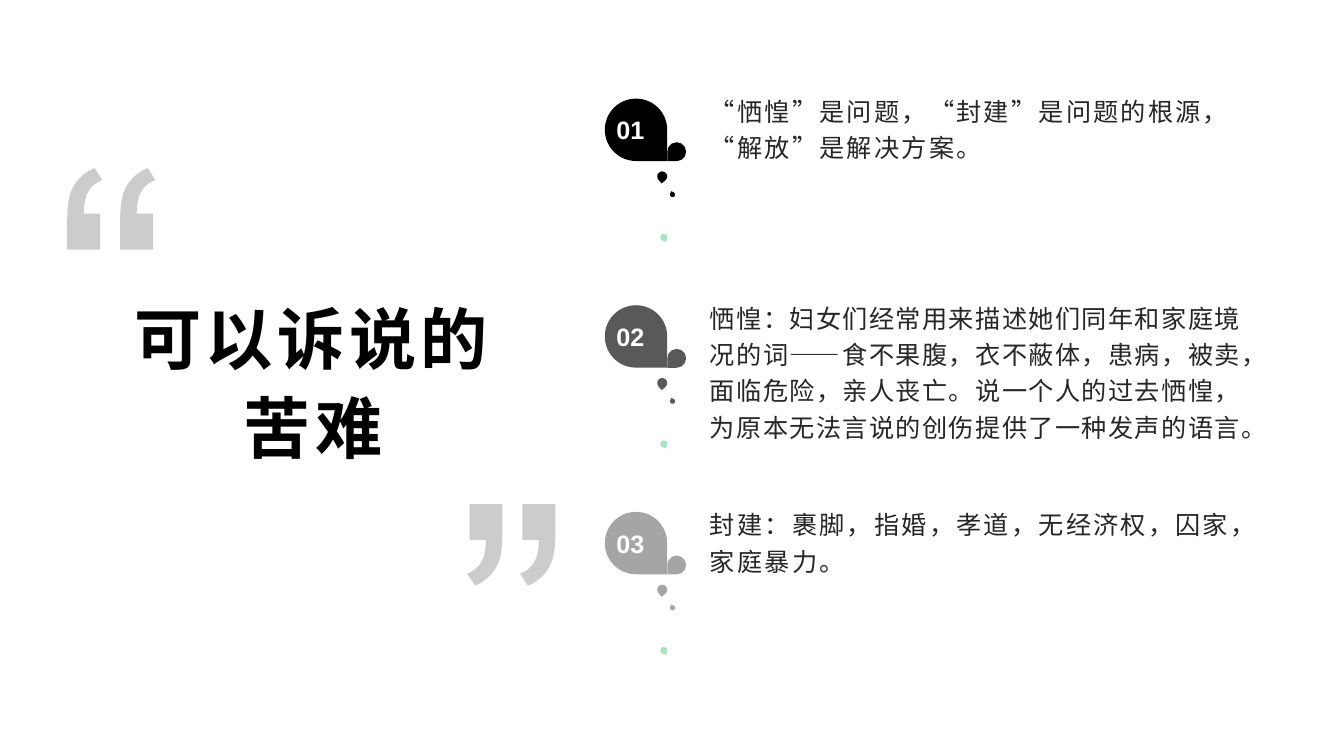
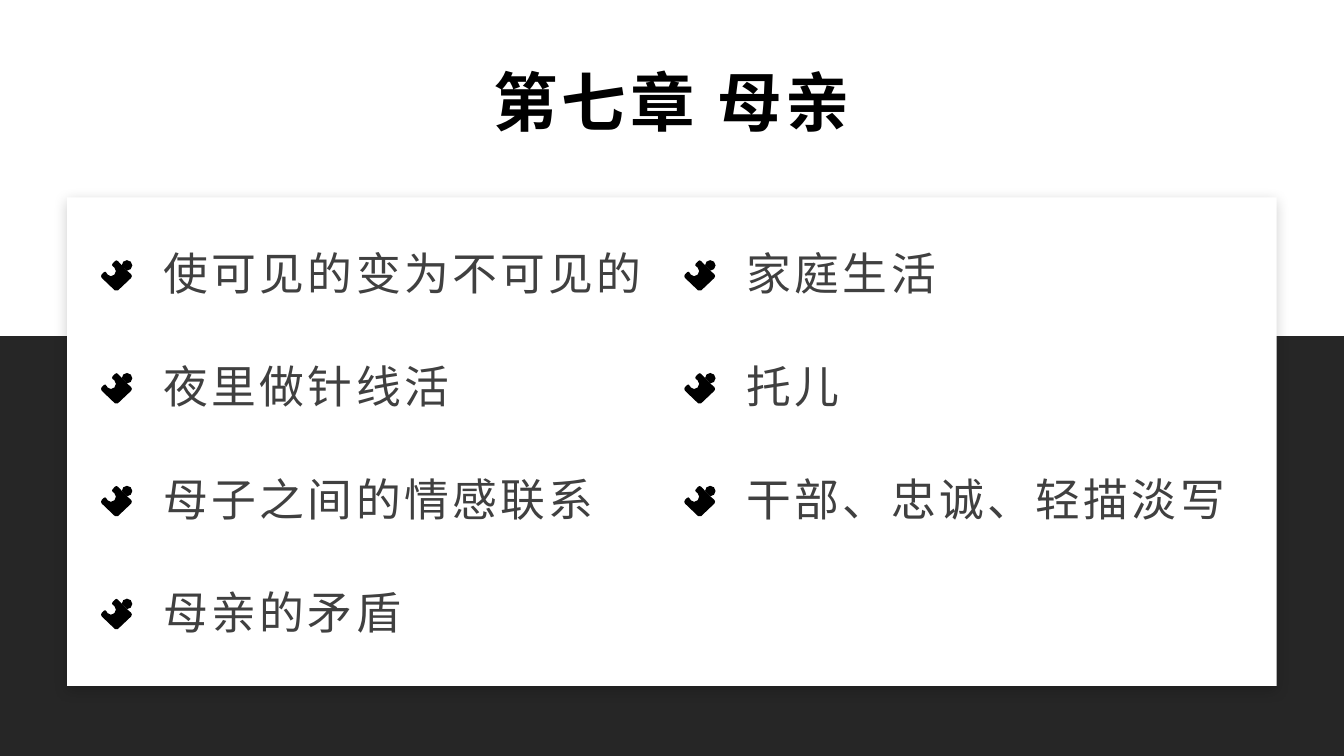
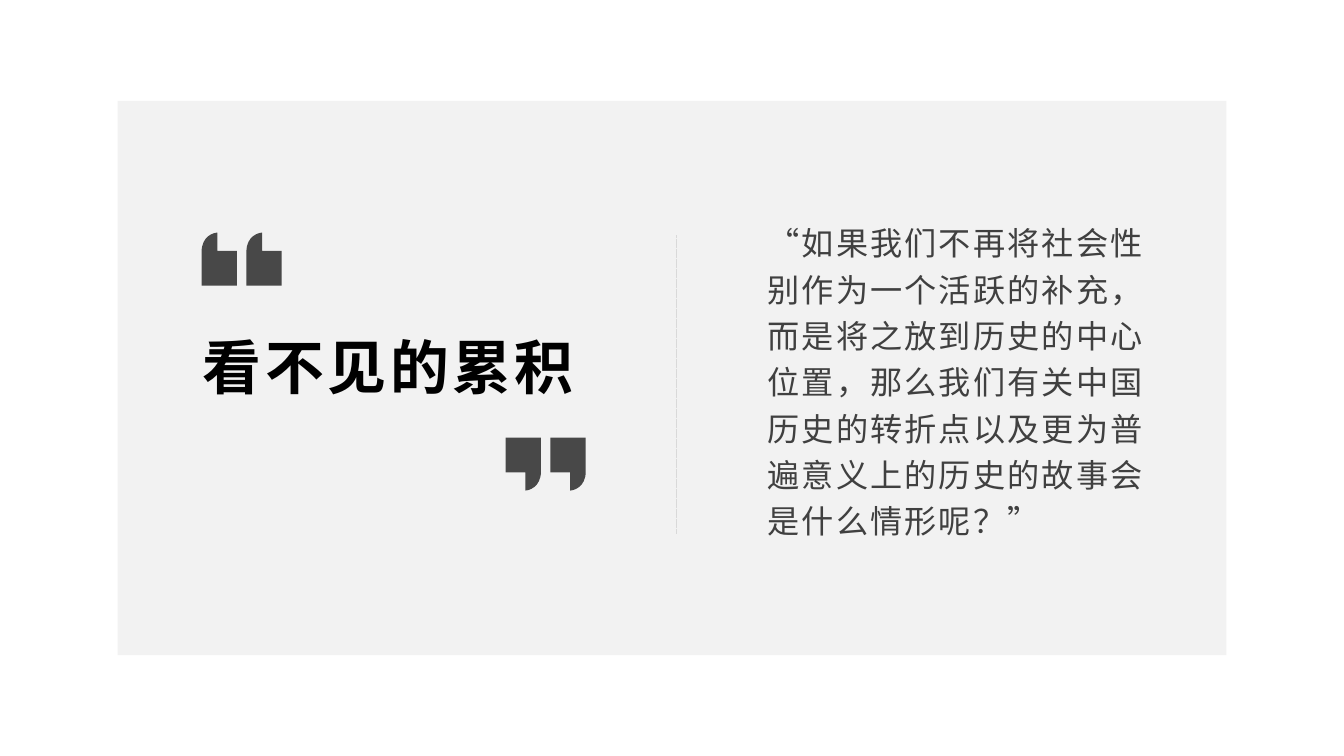
import dataclasses
import itertools
from typing import Any, Optional

import lxml.etree
import pptx
import pptx.dml.color
import pptx.enum.dml
import pptx.enum.shapes
import pptx.enum.text
import pptx.oxml.ns
import pptx.util

Pt = pptx.util.Pt
qn = pptx.oxml.ns.qn
SHAPE = pptx.enum.shapes.MSO_SHAPE
ALIGN = pptx.enum.text.PP_ALIGN
ANCHOR = pptx.enum.text.MSO_ANCHOR

COLORS = {
    "black": "000000",
    "white": "FFFFFF",
    "charcoal": "262626",
    "slate": "404040",
    "gray": "595959",
    "silver": "A5A5A5",
    "rule": "D9D9D9",
    "panel": "F2F2F2",
    "green": "54C888",
}
LATIN = "Arial"
CJK = "Noto Sans CJK SC"
TIGHT = (5, 2.5)

Contour = list[tuple[float, ...]]


@dataclasses.dataclass(frozen=True)
class Box:
    left: float
    top: float
    width: float
    height: float

    def moved(self, dx: float, dy: float) -> "Box":
        return Box(self.left + dx, self.top + dy, self.width, self.height)

    def emu(self) -> tuple[int, ...]:
        return tuple(Pt(v) for v in dataclasses.astuple(self))


@dataclasses.dataclass(frozen=True)
class Drop:
    box: Box
    rotation: float
    color: Optional[str] = None
    alpha: int = 100


@dataclasses.dataclass(frozen=True)
class Point:
    number: str
    text: str
    color: str
    spacing: float


@dataclasses.dataclass(frozen=True)
class QuoteMark:
    comma: Contour
    pitch: float
    alpha: int


DROPS = [
    Drop(Box(432, 70.4, 44.6, 44.6), 90),
    Drop(Box(476.6, 101.6, 13.5, 13.5), 180),
    Drop(Box(469.4, 122.4, 7.2, 7.2), 139),
    Drop(Box(471.6, 167, 5, 5), 110, "green", 50),
    Drop(Box(478.6, 137.2, 3.6, 3.6), 293),
]
POINTS = [
    Point("01", "“恓惶”是问题，“封建”是问题的根源，“解放”是解决方案。", "black", 1.6),
    Point(
        "02",
        "恓惶：妇女们经常用来描述她们同年和家庭境况的词——食不果腹，衣不蔽体，患病，被卖，"
        "面临危险，亲人丧亡。说一个人的过去恓惶，为原本无法言说的创伤提供了一种发声的语言。",
        "gray",
        1,
    ),
    Point("03", "封建：裹脚，指婚，孝道，无经济权，囚家，家庭暴力。", "silver", 1.6),
]
TOPICS = [
    "使可见的变为不可见的", "家庭生活",
    "夜里做针线活", "托儿",
    "母子之间的情感联系", "干部、忠诚、轻描淡写",
    "母亲的矛盾",
]
CURVED_QUOTE = QuoteMark(
    [
        (23.5, 32.6), (23.5, 58.3), (0, 58.3), (0, 38.2),
        (0, 27.4, 1.2, 19.4, 3.8, 14.4),
        (7.2, 8, 12.4, 3, 19.6, 0),
        (25.2, 8.6),
        (20.8, 10.2, 17.4, 13, 15.2, 16.6),
        (13, 20.2, 12, 25.6, 11.8, 32.6),
    ],
    37.8,
    20,
)
BLOCK_QUOTE = QuoteMark(
    [
        (11.2, 0), (11.2, 13), (25.2, 13), (25.2, 37.8), (0, 37.8), (0, 13.7),
        (0, 2.2, 9, 0, 11.2, 0),
    ],
    32,
    70,
)
PUZZLE_PARTS: list[Contour] = [
    [
        (18.7, 7.5),
        (20.8, 7.5, 22.5, 5.8, 22.5, 3.75),
        (22.5, 1.7, 20.8, 0, 18.7, 0),
        (16.6, 0, 15, 1.7, 15, 3.75),
    ],
    [
        (15, 3.6), (12.2, 0.7),
        (11.5, 0, 10.8, 0, 10.1, 0.7),
        (8.4, 2.5),
        (7.8, 3.2, 7.9, 4.1, 8.6, 4.4),
        (8.6, 4.4, 10.8, 5.6, 10.8, 7.8),
        (10.8, 9.7, 9.2, 11.5, 7.2, 11.5),
        (5, 11.5, 4.2, 9.3, 4.2, 9.3),
        (3.7, 8.3, 2.9, 7.9, 2.2, 8.6),
        (0.7, 10.1),
        (0, 10.8, 0, 12, 0.7, 12.7),
        (10.1, 21.7),
        (10.8, 22.3, 11.5, 22.3, 12.2, 21.7),
        (21.7, 12.7),
        (22.3, 12, 22.3, 10.8, 21.7, 10.1),
        (18.7, 7.5),
    ],
]


def rgb(color: str) -> pptx.dml.color.RGBColor:
    return pptx.dml.color.RGBColor.from_string(COLORS[color])


def paint(sp: Any, color: str, alpha: int = 100) -> None:
    sp.shadow.inherit = False
    sp.line.fill.background()
    sp.fill.solid()
    sp.fill.fore_color.rgb = rgb(color)
    if alpha < 100:
        clr = sp._element.spPr.find(".//" + qn("a:srgbClr"))
        lxml.etree.SubElement(clr, qn("a:alpha")).set("val", str(alpha * 1000))


def add_block(s: Any, kind: Any, box: Box, color: str, alpha: int = 100, rotation: float = 0) -> Any:
    sp = s.shapes.add_shape(kind, *box.emu())
    sp.rotation = rotation
    paint(sp, color, alpha)
    return sp


def add_text(
    s: Any, box: Box, text: str, *, size: float, color: str, font: str = LATIN,
    bold: bool = False, spacing: float = 0, align: Any = ALIGN.LEFT, anchor: Any = ANCHOR.TOP,
    line: Optional[float] = None, after: float = 0, inset: tuple[float, float] = (7.2, 3.6),
) -> None:
    tf = s.shapes.add_textbox(*box.emu()).text_frame
    tf.word_wrap = True
    tf.vertical_anchor = anchor
    tf.margin_left = tf.margin_right = Pt(inset[0])
    tf.margin_top = tf.margin_bottom = Pt(inset[1])
    p = tf.paragraphs[0]
    p.alignment = align
    p.line_spacing = line
    p.space_after = Pt(after)
    r = p.add_run()
    r.text = text
    r.font.size = Pt(size)
    r.font.bold = bold
    r.font.name = font
    r.font.color.rgb = rgb(color)
    rpr = r._r.get_or_add_rPr()
    rpr.set("lang", "zh-CN")
    rpr.set("spc", str(round(spacing * 100)))
    ea = lxml.etree.Element(qn("a:ea"))
    ea.set("typeface", CJK)
    rpr.find(qn("a:latin")).addnext(ea)


def add_title(
    s: Any, box: Box, text: str, size: float, spacing: float, line: float = 1.1,
    anchor: Any = ANCHOR.MIDDLE,
) -> None:
    add_text(s, box, text, size=size, color="black", font=CJK, bold=True, spacing=spacing,
             align=ALIGN.CENTER, anchor=anchor, line=line, inset=TIGHT)


def vertices(contour: Contour) -> list[tuple[float, float]]:
    return [(seg[i] * 100, seg[i + 1] * 100) for seg in contour for i in range(0, len(seg), 2)]


def bend(sp: Any, contours: list[Contour]) -> None:
    lines = sp._element.spPr.iter(qn("a:lnTo"))
    segments = [seg for contour in contours for seg in contour[1:]]
    groups = [list(itertools.islice(lines, len(seg) // 2)) for seg in segments]
    for first, *others in groups:
        if others:
            curve = lxml.etree.Element(qn("a:cubicBezTo"))
            first.addprevious(curve)
            for ln in (first, *others):
                curve.append(ln[0])
                ln.getparent().remove(ln)


def add_outline(s: Any, contours: list[Contour], left: float, top: float, color: str, alpha: int = 100) -> Any:
    first, *others = [vertices(c) for c in contours]
    fb = s.shapes.build_freeform(*first[0], scale=Pt(1) / 100)
    fb.add_line_segments(first[1:])
    for pts in others:
        fb.move_to(*pts[0])
        fb.add_line_segments(pts[1:])
    sp = fb.convert_to_shape(Pt(left), Pt(top))
    bend(sp, contours)
    paint(sp, color, alpha)
    return sp


def add_quote(s: Any, mark: QuoteMark, left: float, top: float, rotation: float = 0) -> None:
    second = [tuple(v + mark.pitch * (i % 2 == 0) for i, v in enumerate(seg)) for seg in mark.comma]
    sp = add_outline(s, [mark.comma, second], left, top, "black", mark.alpha)
    sp.rotation = rotation


def add_soft_shadow(sp: Any) -> None:
    effects = sp._element.spPr.find(qn("a:effectLst"))
    shadow = lxml.etree.SubElement(effects, qn("a:outerShdw"))
    for key, value in {"blurRad": Pt(10), "dist": Pt(3), "dir": 90 * 60000, "rotWithShape": 0}.items():
        shadow.set(key, str(int(value)))
    clr = lxml.etree.SubElement(shadow, qn("a:srgbClr"))
    clr.set("val", COLORS["black"])
    lxml.etree.SubElement(clr, qn("a:alpha")).set("val", "20000")


def add_divider(s: Any, x: float, top: float, bottom: float) -> None:
    ln = s.shapes.add_connector(pptx.enum.shapes.MSO_CONNECTOR.STRAIGHT, Pt(x), Pt(top), Pt(x), Pt(bottom))
    ln.line.color.rgb = rgb("rule")
    ln.line.width = Pt(0.1)
    ln.line.dash_style = pptx.enum.dml.MSO_LINE.DASH
    lxml.etree.SubElement(ln._element.spPr, qn("a:effectLst"))


def build_hardships(s: Any) -> None:
    add_title(s, Box(86, 204.2, 275.8, 131.8), "可以诉说的苦难", 48, 3.2)
    for i, point in enumerate(POINTS):
        dy = i * 147.6
        add_text(s, Box(500, 61, 411.8, 123.1).moved(0, dy), point.text, size=18,
                 color="charcoal", spacing=point.spacing, line=1.2, after=8)
        for drop in DROPS:
            add_block(s, SHAPE.TEAR, drop.box.moved(0, dy), drop.color or point.color,
                      drop.alpha, drop.rotation)
        add_text(s, Box(433.2, 78.3, 42.5, 36).moved(0, dy), point.number, size=18,
                 color="white", bold=True)
    add_quote(s, CURVED_QUOTE, 48, 120)
    add_quote(s, CURVED_QUOTE, 333.7, 360, 180)


def build_mother(s: Any) -> None:
    add_block(s, SHAPE.RECTANGLE, Box(0, 240, 960, 300), "charcoal")
    add_soft_shadow(add_block(s, SHAPE.RECTANGLE, Box(48, 141, 864, 349), "white"))
    add_title(s, Box(48, 48, 864, 60), "第七章 母亲", 46, 3, 0.9, ANCHOR.TOP)
    for topic, (row, col) in zip(TOPICS, itertools.product(range(4), range(2))):
        dx, dy = col * 416.6, row * 80.6
        for part in PUZZLE_PARTS:
            add_outline(s, [part], 72 + dx, 185.8 + dy, "black")
        add_text(s, Box(109.6, 169.2, 362.2, 51.1).moved(dx, dy), topic, size=32,
                 color="slate", spacing=2.4, anchor=ANCHOR.MIDDLE, after=8)


def build_accumulation(s: Any) -> None:
    add_block(s, SHAPE.RECTANGLE, Box(84, 72, 792, 396), "panel")
    add_divider(s, 483, 168, 381)
    for dx in (0, BLOCK_QUOTE.pitch):
        add_outline(s, [BLOCK_QUOTE.comma], 144 + dx, 166.2, "black", BLOCK_QUOTE.alpha)
    for dx in (0, BLOCK_QUOTE.pitch):
        sp = add_outline(s, [BLOCK_QUOTE.comma], 361.2 + dx, 312.6, "black", BLOCK_QUOTE.alpha)
        sp.rotation = 180
    add_text(
        s, Box(543.2, 147.6, 285.1, 244.8),
        "“如果我们不再将社会性别作为一个活跃的补充，而是将之放到历史的中心位置，"
        "那么我们有关中国历史的转折点以及更为普遍意义上的历史的故事会是什么情形呢？”",
        size=23, color="slate", font=CJK, spacing=1.5, anchor=ANCHOR.MIDDLE,
        line=1.2, after=8, inset=TIGHT,
    )
    add_title(s, Box(132, 229, 290.9, 59.8), "看不见的累积", 42, 2.6)


def main() -> None:
    prs = pptx.Presentation()
    prs.slide_width, prs.slide_height = Pt(960), Pt(540)
    for build in (build_hardships, build_mother, build_accumulation):
        build(prs.slides.add_slide(prs.slide_layouts[6]))
    prs.save("out.pptx")


if __name__ == "__main__":
    main()
